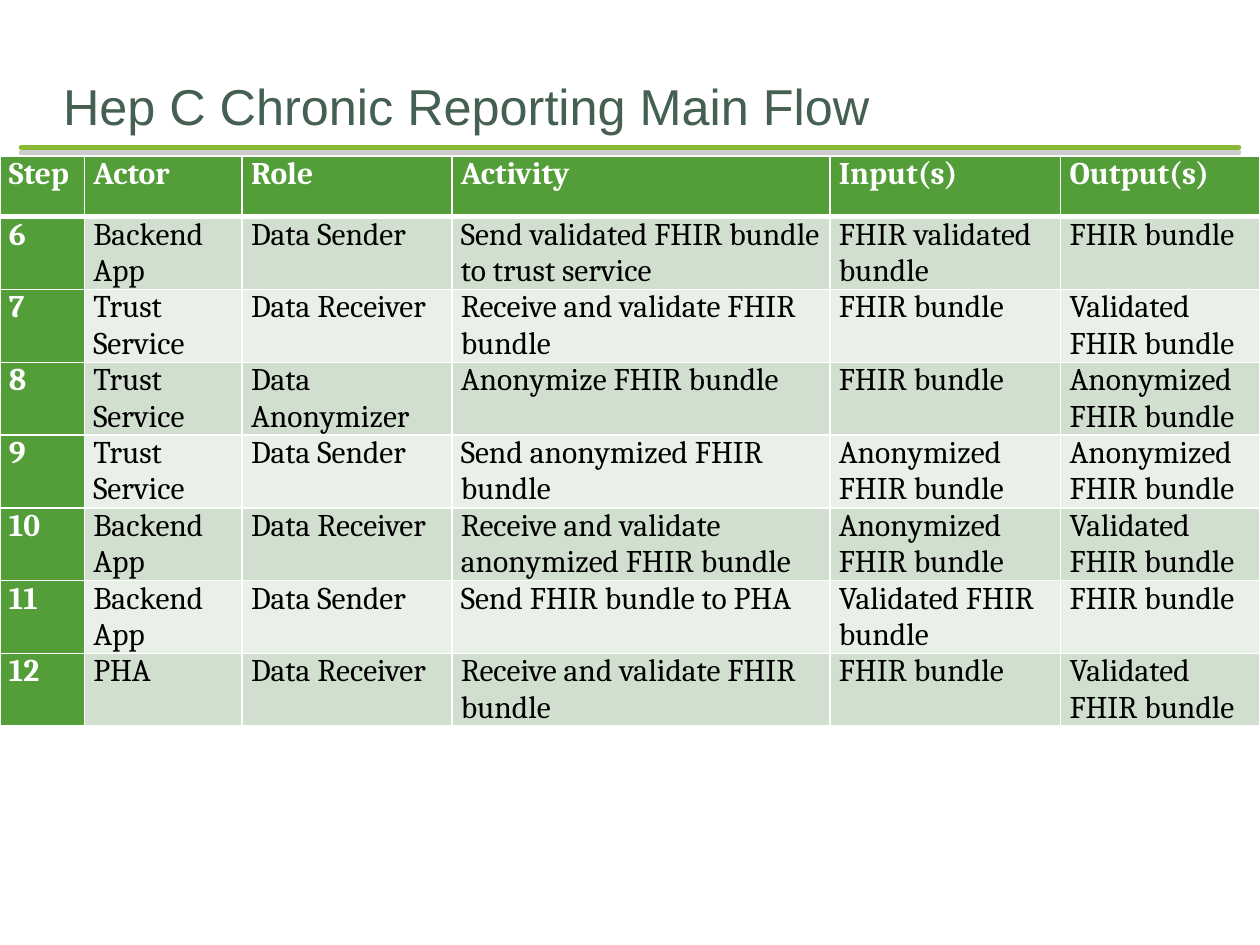
from lxml.etree import SubElement
from pptx import Presentation
from pptx.dml.color import RGBColor
from pptx.enum.shapes import MSO_CONNECTOR
from pptx.enum.text import MSO_ANCHOR, PP_ALIGN
from pptx.oxml import parse_xml
from pptx.oxml.ns import nsdecls, qn
from pptx.util import Cm, Pt

COLORS = {
    "title": "455F51",
    "rule": "8AB833",
    "shadow": "808080",
    "header": "549E39",
    "odd_row": "D1DFCE",
    "even_row": "E9F0E8",
    "white": "FFFFFF",
    "black": "000000",
}
COLUMN_WIDTHS = [1.7, 3.18, 4.23, 7.62, 4.65, 4.02]
HEADER_HEIGHT, ROW_HEIGHT = 1.22, 1.46
FLOW = [
    ["Step", "Actor", "Role", "Activity", "Input(s)", "Output(s)"],
    ["6", "Backend App", "Data Sender", "Send validated FHIR bundle to trust service",
     "FHIR validated bundle", "FHIR bundle"],
    ["7", "Trust Service", "Data Receiver", "Receive and validate FHIR bundle",
     "FHIR bundle", "Validated FHIR bundle"],
    ["8", "Trust Service", "Data Anonymizer", "Anonymize FHIR bundle",
     "FHIR bundle", "Anonymized FHIR bundle"],
    ["9", "Trust Service", "Data Sender", "Send anonymized FHIR bundle",
     "Anonymized FHIR bundle", "Anonymized FHIR bundle"],
    ["10", "Backend App", "Data Receiver", "Receive and validate anonymized FHIR bundle",
     "Anonymized FHIR bundle", "Validated FHIR bundle"],
    ["11", "Backend App", "Data Sender", "Send FHIR bundle to PHA",
     "Validated FHIR bundle", "FHIR bundle"],
    ["12", "PHA", "Data Receiver", "Receive and validate FHIR bundle",
     "FHIR bundle", "Validated FHIR bundle"],
]


class SlideBuilder:
    """Holds the style and the current slide, and adds each kind of element."""

    def __init__(self, presentation):
        self.title_font, self.body_font = "Arial", "Cambria"
        self.title_size, self.body_size = Pt(28.8), Pt(18)
        self.slide = presentation.slides.add_slide(presentation.slide_layouts[5])

    def color(self, name):
        return RGBColor.from_string(COLORS[name])

    def add_run(self, paragraph, text, font, size, color, bold=False):
        run = paragraph.add_run()
        run.text = text
        run.font.name, run.font.size, run.font.bold = font, size, bold
        run.font.color.rgb = self.color(color)

    def title(self, text, left, top, width, height):
        shape = self.slide.shapes.title
        shape.left, shape.top, shape.width, shape.height = map(Cm, (left, top, width, height))
        frame = shape.text_frame
        frame.word_wrap = True
        frame.vertical_anchor = MSO_ANCHOR.BOTTOM
        frame.margin_left = frame.margin_right = frame.margin_bottom = 0
        frame.margin_top = Cm(0.13)
        paragraph = frame.paragraphs[0]
        paragraph.alignment = PP_ALIGN.LEFT
        self.add_run(paragraph, text, self.title_font, self.title_size, "title")

    def rule(self, left, right, top):
        connector = self.slide.shapes.add_connector(
            MSO_CONNECTOR.STRAIGHT, Cm(left), Cm(top), Cm(right), Cm(top))
        connector.line.color.rgb = self.color("rule")
        connector.line.width = Pt(3)
        connector.line._get_or_add_ln().set("cap", "rnd")
        connector._element.spPr.append(parse_xml(
            f'<a:effectLst {nsdecls("a")}>'
            f'<a:outerShdw dist="{Pt(3)}" dir="5400000" algn="ctr" rotWithShape="0">'
            f'<a:srgbClr val="{COLORS["shadow"]}"><a:alpha val="40000"/></a:srgbClr>'
            '</a:outerShdw></a:effectLst>'))

    def border(self, cell, top, bottom):
        properties = cell._tc.get_or_add_tcPr()
        for side, points in (("L", 1), ("R", 1), ("T", top), ("B", bottom)):
            line = SubElement(properties, qn(f"a:ln{side}"), w=str(Pt(points)))
            fill = SubElement(line, qn("a:solidFill"))
            SubElement(fill, qn("a:srgbClr"), val=COLORS["white"])

    def cell(self, cell, text, row, column):
        heading = row == 0 or column == 0
        cell.margin_left = cell.margin_right = Cm(0.18)
        cell.margin_top = cell.margin_bottom = 0
        self.border(cell, 3 if row == 1 else 1, 3 if row == 0 else 1)
        band = "odd_row" if row % 2 else "even_row"
        cell.fill.solid()
        cell.fill.fore_color.rgb = self.color("header" if heading else band)
        self.add_run(cell.text_frame.paragraphs[0], text, self.body_font, self.body_size,
                     "white" if heading else "black", heading)

    def table(self, rows, left, top, widths, header_height, row_height):
        heights = [header_height] + [row_height] * (len(rows) - 1)
        table = self.slide.shapes.add_table(
            len(rows), len(widths), Cm(left), Cm(top), Cm(sum(widths)), Cm(sum(heights))).table
        for column, width in zip(table.columns, widths):
            column.width = Cm(width)
        for row, height in zip(table.rows, heights):
            row.height = Cm(height)
        for row_index, texts in enumerate(rows):
            for column_index, text in enumerate(texts):
                self.cell(table.cell(row_index, column_index), text, row_index, column_index)


def main():
    presentation = Presentation()
    presentation.slide_width, presentation.slide_height = Cm(25.4), Cm(19.05)
    builder = SlideBuilder(presentation)
    builder.rule(0.43, 24.97, 2.97)
    builder.title("Hep C Chronic Reporting Main Flow", 1.27, 1.27, 22.86, 1.47)
    builder.table(FLOW, 0, 3.15, COLUMN_WIDTHS, HEADER_HEIGHT, ROW_HEIGHT)
    presentation.save("out.pptx")


if __name__ == "__main__":
    main()
